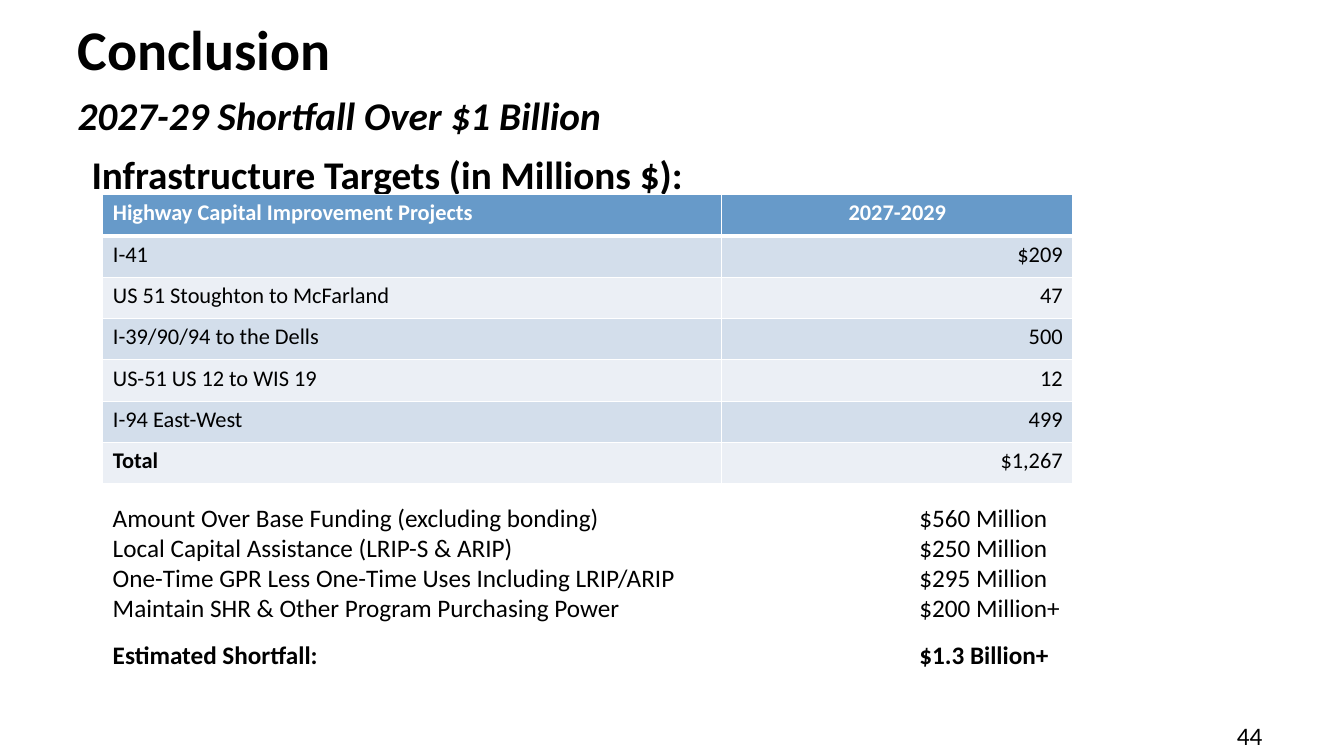
from lxml.etree import SubElement
from pptx import Presentation
from pptx.dml.color import RGBColor
from pptx.enum.text import MSO_ANCHOR, PP_ALIGN
from pptx.oxml.ns import qn
from pptx.util import Inches, Pt

TITLE = "Conclusion"
SUBTITLE = "2027-29 Shortfall Over $1 Billion"
HEADING = "Infrastructure Targets (in Millions $):"
PROJECTS = [
    ("Highway Capital Improvement Projects", "2027-2029"),
    ("I-41", "$209"),
    ("US 51 Stoughton to McFarland", "47"),
    ("I-39/90/94 to the Dells", "500"),
    ("US-51 US 12 to WIS 19", "12"),
    ("I-94 East-West", "499"),
    ("Total", "$1,267"),
]
SHORTFALL = [
    ("Amount Over Base Funding (excluding bonding)", "$560 Million"),
    ("Local Capital Assistance (LRIP-S & ARIP)", "$250 Million"),
    ("One-Time GPR Less One-Time Uses Including LRIP/ARIP", "$295 Million"),
    ("Maintain SHR & Other Program Purchasing Power", "$200 Million+"),
    ("Estimated Shortfall:", "$1.3 Billion+"),
]
PAGE_NUMBER = "44"

BLACK = RGBColor(0, 0, 0)
WHITE = RGBColor(0xFF, 0xFF, 0xFF)
HEADER_BLUE = RGBColor(0x67, 0x9A, 0xC9)
BANDS = (RGBColor(0xEB, 0xEF, 0xF5), RGBColor(0xD3, 0xDE, 0xEB))

COLUMN_WIDTHS = (6.14, 3.48)
ROW_HEIGHT = 0.41
AMOUNT_TAB = 8.0


def style(font, size, bold=False, italic=False, color=BLACK):
    font.name = "Calibri"
    font.size = Pt(size)
    font.bold = bold
    font.italic = italic
    font.color.rgb = color


def add_text_frame(slide, left, top, width, height):
    box = slide.shapes.add_textbox(Inches(left), Inches(top), Inches(width), Inches(height))
    box.text_frame.word_wrap = True
    return box.text_frame


def add_tab_stop(paragraph, position):
    tab_list = SubElement(paragraph._p.get_or_add_pPr(), qn("a:tabLst"))
    SubElement(tab_list, qn("a:tab"), pos=str(Inches(position)), algn="l")


def set_borders(cell, bottom_width):
    properties = cell._tc.get_or_add_tcPr()
    for position, side in enumerate(("lnL", "lnR", "lnT", "lnB")):
        width = bottom_width if side == "lnB" else 1
        line = SubElement(properties, qn(f"a:{side}"), w=str(Pt(width)))
        properties.insert(position, line)
        fill = SubElement(line, qn("a:solidFill"))
        SubElement(fill, qn("a:srgbClr"), val=str(WHITE))


def add_title(slide):
    title = slide.shapes.title
    title.left, title.top = Inches(0.67), Inches(0.19)
    title.width, title.height = Inches(12), Inches(1.25)
    frame = title.text_frame
    frame.text = f"{TITLE}\v{SUBTITLE}"
    frame.word_wrap = True
    frame.vertical_anchor = MSO_ANCHOR.MIDDLE
    paragraph = frame.paragraphs[0]
    paragraph.alignment = PP_ALIGN.LEFT
    paragraph.line_spacing = Pt(40)
    title_run, subtitle_run = paragraph.runs
    style(title_run.font, 40, bold=True)
    style(subtitle_run.font, 28, bold=True, italic=True)


def add_project_table(slide):
    table = slide.shapes.add_table(
        len(PROJECTS), len(COLUMN_WIDTHS), Inches(1.02), Inches(1.93),
        Inches(sum(COLUMN_WIDTHS)), Inches(ROW_HEIGHT * len(PROJECTS))).table
    for column, width in zip(table.columns, COLUMN_WIDTHS):
        column.width = Inches(width)
    for row_index, values in enumerate(PROJECTS):
        table.rows[row_index].height = Inches(ROW_HEIGHT)
        is_header = row_index == 0
        for column_index, value in enumerate(values):
            cell = table.cell(row_index, column_index)
            cell.text = value
            cell.fill.solid()
            cell.fill.fore_color.rgb = HEADER_BLUE if is_header else BANDS[row_index % 2]
            set_borders(cell, 3 if is_header else 1)
            paragraph = cell.text_frame.paragraphs[0]
            if column_index == 1:
                paragraph.alignment = PP_ALIGN.CENTER if is_header else PP_ALIGN.RIGHT
            style(paragraph.runs[0].font, 16, bold=is_header or value == "Total",
                  color=WHITE if is_header else BLACK)


def add_shortfall(slide):
    frame = add_text_frame(slide, 1.02, 4.93, 10.23, 1.78)
    frame.text = "\n".join(f"{label}\t{amount}" for label, amount in SHORTFALL)
    total = frame.paragraphs[-1]
    total.space_before = Pt(12)
    total.space_after = Pt(6)
    for paragraph in frame.paragraphs:
        add_tab_stop(paragraph, AMOUNT_TAB)
        for run in paragraph.runs:
            style(run.font, 18, bold=paragraph is frame.paragraphs[-1])
    for run in total.runs:
        run.font.bold = True


def add_page_number(slide):
    paragraph = add_text_frame(slide, 12.17, 7.1, 1, 0.71).paragraphs[0]
    paragraph.text = PAGE_NUMBER
    style(paragraph.runs[0].font, 18)


def main():
    presentation = Presentation()
    presentation.slide_width = Inches(13.33)
    presentation.slide_height = Inches(7.5)
    slide = presentation.slides.add_slide(presentation.slide_layouts[5])

    add_title(slide)
    heading = add_text_frame(slide, 0.81, 1.44, 11.5, 0.63).paragraphs[0]
    heading.text = HEADING
    style(heading.runs[0].font, 28, bold=True)
    add_project_table(slide)
    add_shortfall(slide)
    add_page_number(slide)
    presentation.save("out.pptx")


if __name__ == "__main__":
    main()
